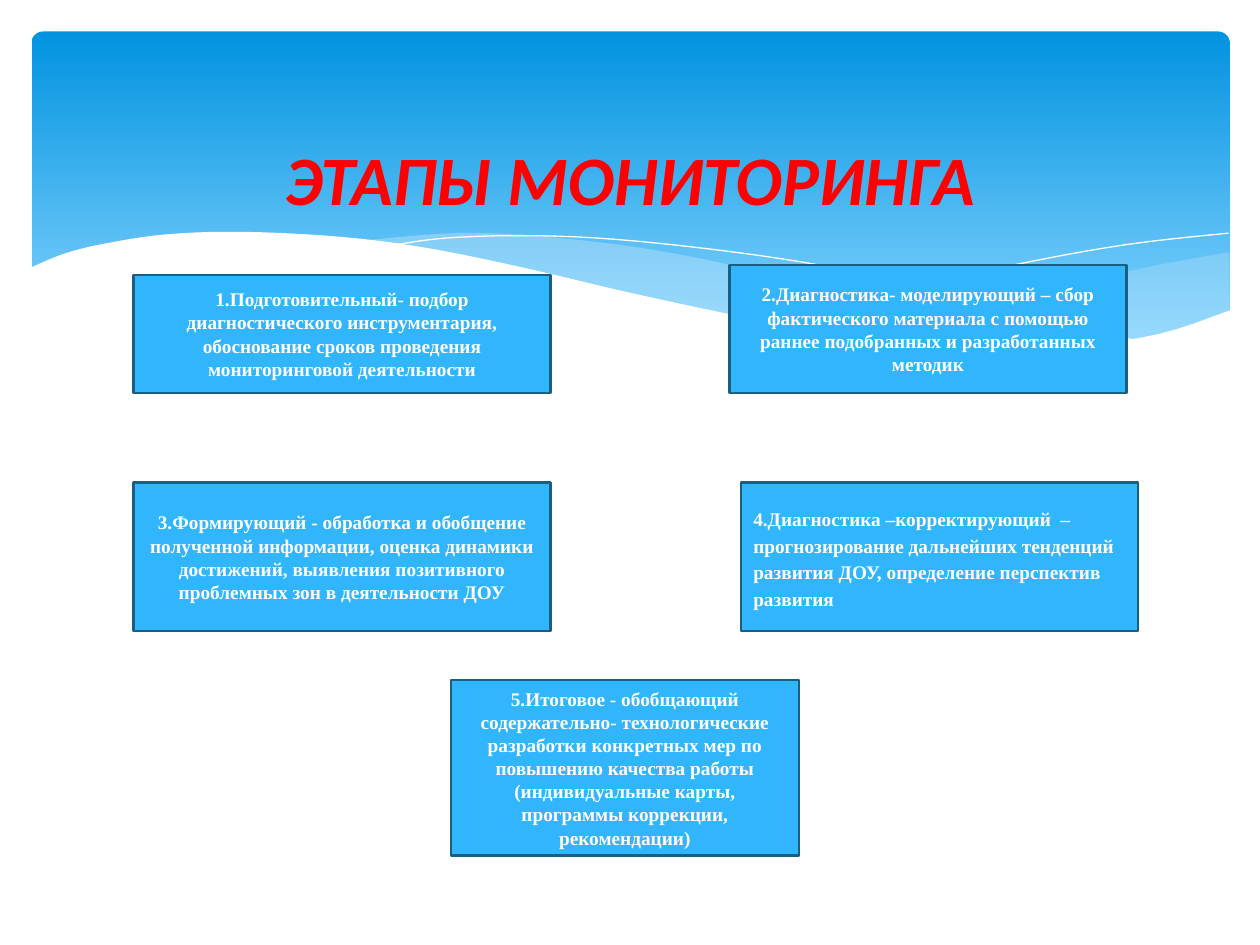
from lxml.etree import SubElement
from pptx import Presentation
from pptx.dml.color import RGBColor
from pptx.enum.shapes import MSO_SHAPE as SHAPE
from pptx.enum.text import MSO_ANCHOR as ANCHOR, PP_ALIGN as ALIGN
from pptx.oxml.ns import qn
from pptx.util import Emu, Inches, Pt

COLS, ROWS = 100, 75
WIDTH, HEIGHT = Inches(10), Inches(7.5)
LEFT, TOP_ROW, MIDDLE_ROW = 10.6, 21.8, 38.3
STAGES = [
    ((LEFT, TOP_ROW, 33.1, 9.4), "1.Подготовительный- подбор диагностического инструментария, "
     "обоснование сроков проведения мониторинговой деятельности"),
    ((57.9, 21, 31.5, 10.2), "2.Диагностика- моделирующий – сбор фактического материала "
     "с помощью раннее подобранных и разработанных методик"),
    ((LEFT, MIDDLE_ROW, 33.1, 11.8), "3.Формирующий - обработка и обобщение полученной информации, "
     "оценка динамики достижений, выявления позитивного проблемных зон в деятельности ДОУ"),
    ((58.8, MIDDLE_ROW, 31.5, 11.8), "4.Диагностика –корректирующий  –прогнозирование дальнейших "
     "тенденций развития ДОУ, определение перспектив развития"),
    ((35.8, 54, 27.6, 13.9), "5.Итоговое - обобщающий содержательно- технологические разработки "
     "конкретных мер по повышению качества работы (индивидуальные карты, программы коррекции, "
     "рекомендации)"),
]


def color(value):
    """Turn a hex string into a colour."""
    return RGBColor.from_string(value)


def place(box):
    """Turn grid columns and rows into slide lengths."""
    x, y, w, h = box
    return [Emu(round(v)) for v in (x * WIDTH / COLS, y * HEIGHT / ROWS,
                                    w * WIDTH / COLS, h * HEIGHT / ROWS)]


def smooth(points, steps=5):
    """Run a Catmull-Rom curve through the points."""
    ends = [points[0], *points, points[-1]]
    curve = [points[0]]
    for a, b, c, d in zip(ends, ends[1:], ends[2:], ends[3:]):
        for i in range(1, steps + 1):
            t = i / steps
            curve.append(tuple(
                (2 * q + (r - p) * t + (2 * p - 5 * q + 4 * r - u) * t ** 2
                 + (3 * q - p - 3 * r + u) * t ** 3) / 2
                for p, q, r, u in zip(a, b, c, d)))
    return curve


def add_outline(s, box, points, fill=None, alpha=100):
    """Draw a filled wave, or a white hairline when no fill is given."""
    spots = [place((box[0] + x, box[1] + y, 0, 0))[:2] for x, y in points]
    builder = s.shapes.build_freeform(*spots[0], scale=1.0)
    builder.add_line_segments(spots[1:], close=fill is not None)
    sp = builder.convert_to_shape()
    sp.shadow.inherit = False
    if fill:
        sp.fill.solid()
        sp.fill.fore_color.rgb = color(fill)
        sp.line.fill.background()
        clr = sp.fill._xPr.find(".//" + qn("a:srgbClr"))
        SubElement(clr, qn("a:alpha"), val=str(alpha * 1000))
    else:
        sp.fill.background()
        sp.line.color.rgb = color("FFFFFF")
        sp.line.width = Pt(0)


def add_panel(s, box):
    """Draw the rounded gradient panel behind the title."""
    sp = s.shapes.add_shape(SHAPE.ROUNDED_RECTANGLE, *place(box))
    sp.adjustments[0] = 0.034
    sp.shadow.inherit = False
    sp.line.fill.background()
    sp.fill.gradient()
    sp.fill.gradient_angle = 270
    for stop, (position, value) in zip(sp.fill.gradient_stops, [(0, "0293E0"), (0.9, "83D3FE")]):
        stop.position = position
        stop.color.rgb = color(value)


def add_waves(s, box):
    """Draw the waves across the foot of the panel, from the box's top left corner."""
    right_top = smooth([(97.6, 2), (92.1, 3), (86.1, 4.3), (75.3, 6.8), (66.1, 8.5)])
    right_foot = smooth([(66.1, 8.5), (73.2, 9.4), (80.3, 9.8), (87.2, 9.4), (92.8, 8.3), (97.6, 6.7)])
    add_outline(s, box, right_top + right_foot, "C6E7FC", 29)

    middle_top = smooth([(89.3, 9.3), (80.7, 8), (70.6, 6), (62.9, 4.2), (55.5, 2.5),
                         (48.9, 1.4), (42, 0.7), (36.1, 0.5), (28.6, 1.1)])
    middle_foot = smooth([(28.6, 1.1), (36.2, 2.3), (44.9, 4.2), (56.6, 6.8), (66.5, 8.6),
                          (74.8, 9.6), (81.8, 9.8), (89.3, 9.3)])
    add_outline(s, box, middle_top + middle_foot, "C6E7FC", 40)

    add_outline(s, box, smooth([(30.9, 1.5), (35.3, 0.9), (41.6, 0.7), (48.9, 1), (58.2, 2),
                                (66.5, 3.3), (76, 5.3), (90.7, 9.2)]))
    add_outline(s, box, smooth([(61.3, 7.7), (69.5, 5.5), (80.6, 3), (89.5, 1.4), (97.5, 0.5)]))

    crest = smooth([(97.7, 6.6), (92, 8.5), (85, 9.5), (77.8, 9.6), (68.8, 8.8), (60.3, 7.4),
                    (50.3, 5.3), (41.8, 3.3), (34, 1.7), (27.1, 0.8), (19.3, 0.4), (13.2, 0.6),
                    (8.5, 1.3), (5.2, 2.1), (2.3, 3.3)])
    add_outline(s, box, crest + [(2.3, 14.9), (97.7, 14.9)], "FFFFFF")


def format_runs(p, font, size, value, italic=False):
    """Set the bold type of every run in a paragraph."""
    for r in p.runs:
        r.font.name, r.font.size = font, Pt(size)
        r.font.bold, r.font.italic = True, italic
        r.font.color.rgb = color(value)


def add_title(s, box, text):
    """Fill the title placeholder and bring it in front of the panel."""
    title = s.shapes.title
    title.left, title.top, title.width, title.height = place(box)
    tf = title.text_frame
    tf.text = text
    tf.vertical_anchor = ANCHOR.BOTTOM
    tf.margin_bottom = 0
    p = tf.paragraphs[0]
    p.alignment = ALIGN.CENTER
    format_runs(p, "Calibri", 39.6, "FF0000", italic=True)
    s.shapes._spTree.append(title._element)


def add_stage(s, box, text):
    """Add one stage box and return its paragraph."""
    sp = s.shapes.add_shape(SHAPE.RECTANGLE, *place(box))
    sp.shadow.inherit = False
    sp.fill.solid()
    sp.fill.fore_color.rgb = color("31B6FD")
    sp.line.color.rgb = color("195F84")
    sp.line.width = Pt(1.25)
    tf = sp.text_frame
    tf.text = text
    tf.word_wrap = True
    tf.vertical_anchor = ANCHOR.MIDDLE
    p = tf.paragraphs[0]
    p.alignment = ALIGN.CENTER
    format_runs(p, "Times New Roman", 11, "FFFFFF")
    return p


def main():
    """Build the slide and save it."""
    prs = Presentation()
    prs.slide_width, prs.slide_height = WIDTH, HEIGHT
    s = prs.slides.add_slide(prs.slide_layouts[5])
    add_panel(s, (2.5, 2.5, 95.1, 27))
    add_waves(s, (0, 18, 100, 15))
    add_title(s, (5, 3.7, 90, 13.7), "ЭТАПЫ МОНИТОРИНГА")
    paragraphs = [add_stage(s, box, text) for box, text in STAGES]
    correcting = paragraphs[3]
    correcting.alignment = ALIGN.LEFT
    correcting.line_spacing = 1.15
    correcting.space_after = Pt(10)
    prs.save("out.pptx")


if __name__ == "__main__":
    main()
